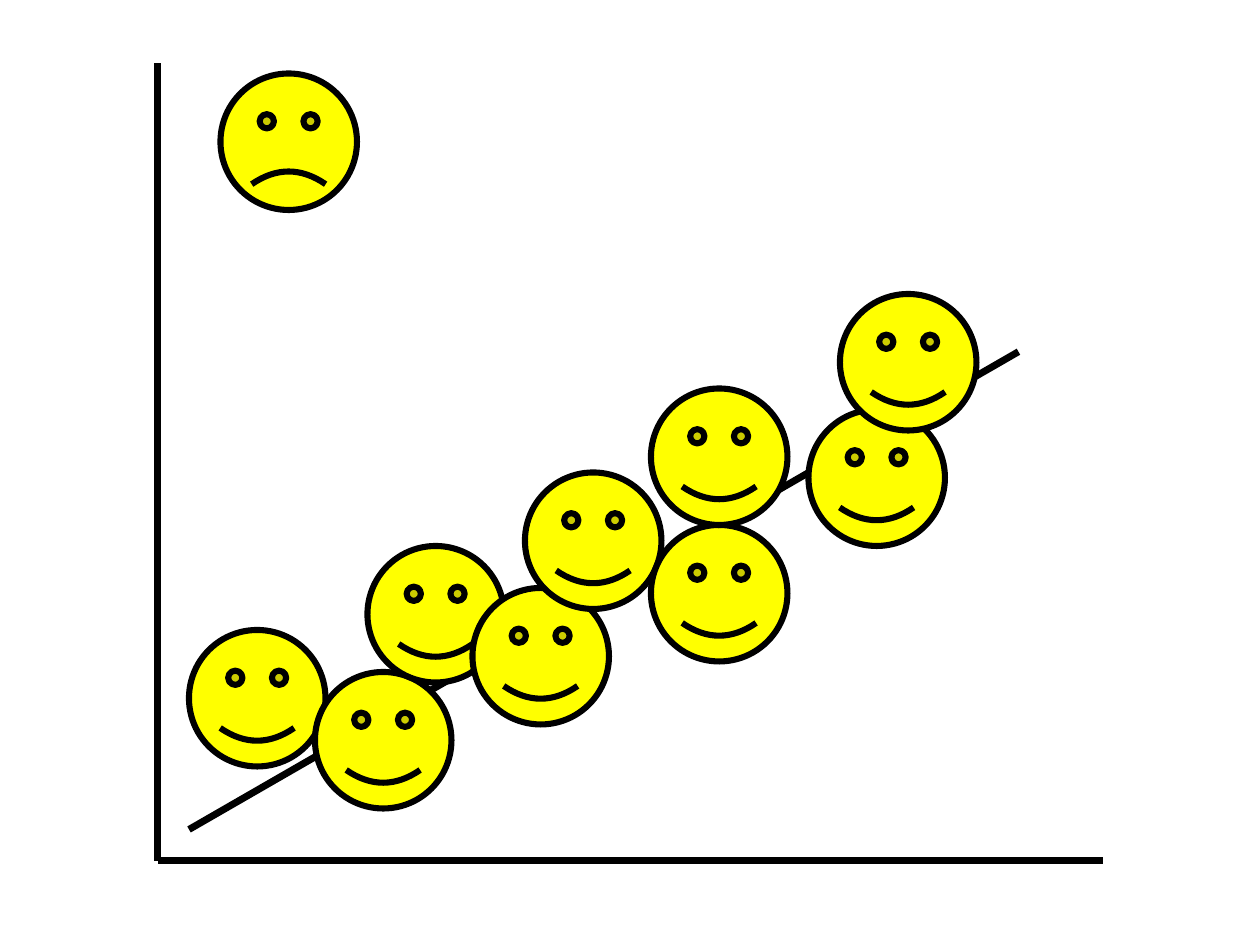
from lxml.etree import SubElement
from pptx import Presentation
from pptx.dml.color import RGBColor
from pptx.enum.shapes import MSO_CONNECTOR, MSO_SHAPE
from pptx.oxml.ns import qn
from pptx.util import Pt


def paint(color_format, color):
    color_format.rgb = RGBColor.from_string(color)


def draw_line(x1, y1, x2, y2):
    line = slide.shapes.add_connector(
        MSO_CONNECTOR.STRAIGHT, Pt(x1), Pt(y1), Pt(x2), Pt(y2))
    paint(line.line.color, BLACK)
    line.line.width = Pt(4)
    SubElement(line._element.spPr, qn("a:effectLst"))


BLACK, YELLOW = "000000", "FFFF00"
FACE_SIZE = 78
FROWN = -0.04653
SMILE = 0.04653

deck = Presentation()
deck.slide_width, deck.slide_height = Pt(720), Pt(540)
slide = deck.slides.add_slide(deck.slide_layouts[6])

draw_line(108, 474, 582, 201)

data_points = [
    (108, 360, SMILE),
    (180, 384, SMILE),
    (210, 312, SMILE),
    (270, 336, SMILE),
    (300, 270, SMILE),
    (372, 300, SMILE),
    (372, 222, SMILE),
    (462, 234, SMILE),
    (480, 168, SMILE),
    (126, 42, FROWN),
]
for left, top, mouth in data_points:
    face = slide.shapes.add_shape(
        MSO_SHAPE.SMILEY_FACE, Pt(left), Pt(top), Pt(FACE_SIZE), Pt(FACE_SIZE))
    face.adjustments[0] = mouth
    face.shadow.inherit = False
    face.fill.solid()
    paint(face.fill.fore_color, YELLOW)
    paint(face.line.color, BLACK)
    face.line.width = Pt(3.5)

origin_x, origin_y = 90, 492
draw_line(origin_x, 36, origin_x, origin_y)
draw_line(630, origin_y, origin_x, origin_y)

deck.save("out.pptx")
